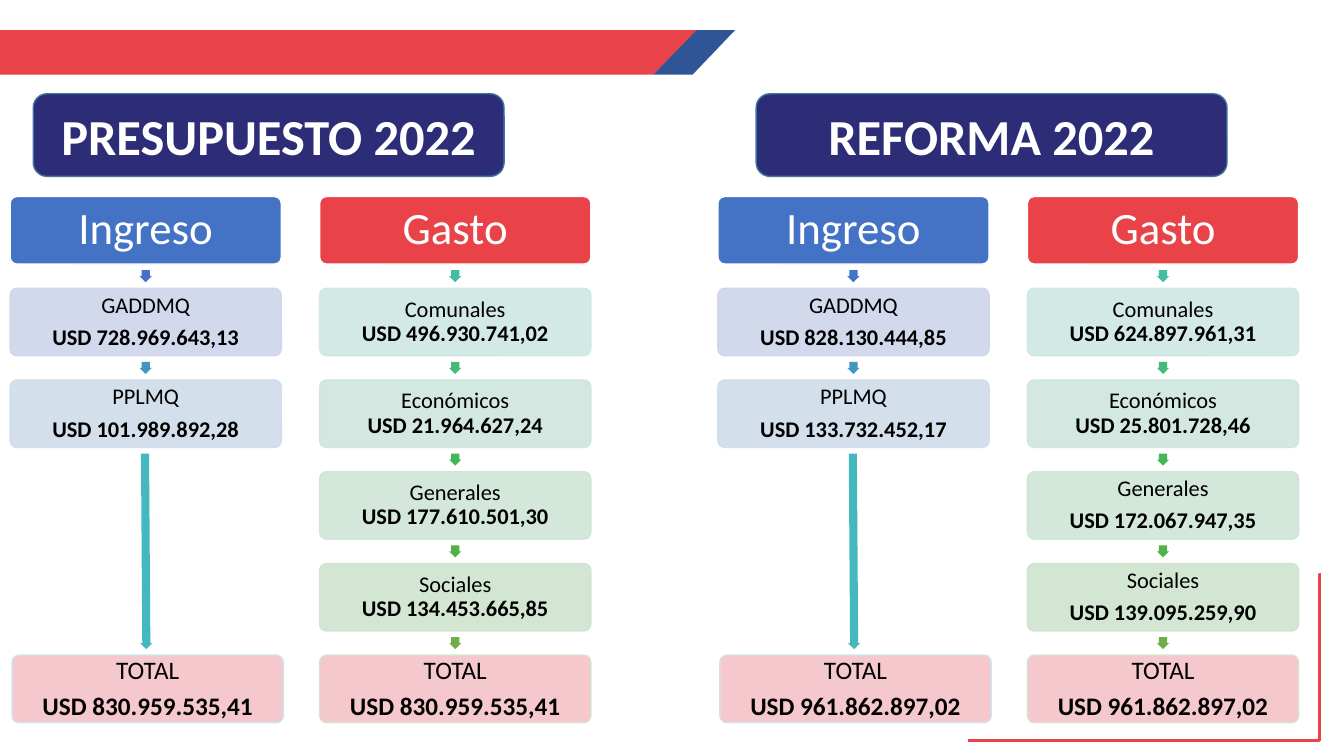
import pptx
import pptx.dml.color
import pptx.enum.shapes
import pptx.enum.text
import pptx.oxml.ns
import pptx.oxml.xmlchemy
import pptx.util
from pptx.util import Inches

SHAPES = pptx.enum.shapes.MSO_SHAPE
RED, BLUE, NAVY, WHITE, BLACK = "E94349", "4472C4", "2C2D76", "FFFFFF", "000000"
BOX_WIDTH, BOX_HEIGHT, ROW_PITCH = 2.69, 0.67, 0.91
TOTAL_ROW = 5
TOTAL_FILL = "F4C3C9"

# Each step: fill of its box, colour of the arrow that leads to it
INCOME_STEPS = [("CFD5EA", BLUE), ("CFDDE9", "4496C1")]
EXPENSE_STEPS = [("CFE7E4", "43BCA0"), ("CFE6DD", "44B97B"),
                 ("CFE5D6", "45B559"), ("CFE4CF", "52B146")]

# "\n" starts a paragraph, "\v" only breaks the line
BUDGET_INCOME = ["GADDMQ\nUSD 728.969.643,13", "PPLMQ\nUSD 101.989.892,28"]
BUDGET_EXPENSES = ["Comunales\vUSD 496.930.741,02", "Económicos\vUSD 21.964.627,24",
                   "Generales\vUSD 177.610.501,30", "Sociales\vUSD 134.453.665,85"]
REFORM_INCOME = ["GADDMQ\nUSD 828.130.444,85", "PPLMQ\nUSD 133.732.452,17"]
REFORM_EXPENSES = ["Comunales\vUSD 624.897.961,31", "Económicos\vUSD 25.801.728,46",
                   "Generales\nUSD 172.067.947,35", "Sociales\nUSD 139.095.259,90"]


def set_color(color_format, hex_color):
    color_format.rgb = pptx.dml.color.RGBColor.from_string(hex_color)


def set_fill(shape, hex_color):
    shape.shadow.inherit = False
    shape.fill.solid()
    set_color(shape.fill.fore_color, hex_color)


def set_line(shape, hex_color, width=1):
    shape.line.width = pptx.util.Pt(width)
    set_color(shape.line.color, hex_color)


def make_translucent(shape):
    """Give the fill and the line of a shape 90 % opacity."""
    for color in list(shape._element.spPr.iter(pptx.oxml.ns.qn("a:srgbClr"))):
        alpha = pptx.oxml.xmlchemy.OxmlElement("a:alpha")
        alpha.set("val", "90000")
        color.append(alpha)


def write_text(shape, text, size, hex_color, bold=False):
    frame = shape.text_frame
    frame.word_wrap = True
    frame.vertical_anchor = pptx.enum.text.MSO_ANCHOR.MIDDLE
    frame.text = text
    for paragraph in frame.paragraphs:
        paragraph.alignment = pptx.enum.text.PP_ALIGN.CENTER
        for run in paragraph.runs:
            run.font.name = "Calibri"
            run.font.size = pptx.util.Pt(size)
            run.font.bold = bold
            set_color(run.font.color, hex_color)


def add_box(shapes, left, top, text, size, fill, line, text_color=BLACK):
    box = shapes.add_shape(SHAPES.ROUNDED_RECTANGLE, Inches(left), Inches(top),
                           Inches(BOX_WIDTH), Inches(BOX_HEIGHT))
    box.adjustments[0] = 0.1
    set_fill(box, fill)
    set_line(box, line)
    write_text(box, text, size, text_color)
    frame = box.text_frame
    frame.margin_left = frame.margin_right = Inches(0.04)
    frame.margin_top = frame.margin_bottom = Inches(0.04)
    for paragraph in frame.paragraphs:
        paragraph.line_spacing = 0.9
        paragraph.space_after = pptx.util.Pt(0.35 * size)
    return box


def add_amount_box(shapes, left, top, text, size, fill, line):
    box = add_box(shapes, left, top, text, size, fill, line)
    box.text_frame.paragraphs[-1].runs[-1].font.bold = True
    make_translucent(box)


def add_down_arrow(shapes, center, top, bottom, hex_color, rotation=90):
    """Place an arrow between two boxes, whose facing sides are at top and bottom."""
    thickness = 0.12
    length = bottom - top - 0.12
    arrow = shapes.add_shape(SHAPES.RIGHT_ARROW, Inches(center - length / 2),
                             Inches((top + bottom - thickness) / 2),
                             Inches(length), Inches(thickness))
    arrow.rotation = rotation
    arrow.adjustments[0] = 0.667
    arrow.adjustments[1] = 0.5
    set_fill(arrow, hex_color)
    arrow.line.fill.background()


def add_column(shapes, left, top, title, title_fill, steps, texts, total,
               total_line, total_arrow, total_shift=0, total_rotation=90):
    center = left + BOX_WIDTH / 2
    add_box(shapes, left, top, title, 32, title_fill, WHITE, WHITE)
    bottom = top + BOX_HEIGHT
    for row, ((fill, arrow_color), text) in enumerate(zip(steps, texts), start=1):
        box_top = top + row * ROW_PITCH
        add_down_arrow(shapes, center, bottom, box_top, arrow_color)
        add_amount_box(shapes, left, box_top, text, 16, fill, fill)
        bottom = box_top + BOX_HEIGHT
    total_top = top + TOTAL_ROW * ROW_PITCH
    add_down_arrow(shapes, center, bottom, total_top, total_arrow, total_rotation)
    add_amount_box(shapes, left + total_shift, total_top, f"TOTAL\nUSD {total}", 18,
                   TOTAL_FILL, total_line)


def add_diagram(slide, left, top, income, expenses, total):
    shapes = slide.shapes.add_group_shape().shapes
    add_column(shapes, left, top, "Ingreso", BLUE, INCOME_STEPS, income, total,
               "CFE3E8", "43B8BF", total_shift=0.02, total_rotation=89.6)
    add_column(shapes, left + 3.07, top, "Gasto", RED, EXPENSE_STEPS, expenses, total,
               "D5E3CF", "70AD47")


def add_heading(slide, left, top, text):
    heading = slide.shapes.add_shape(SHAPES.FLOWCHART_ALTERNATE_PROCESS, Inches(left),
                                     Inches(top), Inches(4.67), Inches(0.82))
    set_fill(heading, NAVY)
    set_line(heading, "43739E")
    write_text(heading, text, 36, WHITE, bold=True)


def add_band(slide, points, hex_color):
    corners = [(Inches(x), Inches(y)) for x, y in points]
    builder = slide.shapes.build_freeform(*corners[0])
    builder.add_line_segments(corners[1:], close=True)
    band = builder.convert_to_shape()
    set_fill(band, hex_color)
    band.line.fill.background()


def add_top_banner(slide, top, bottom):
    add_band(slide, [(0, top), (6.92, top), (6.48, bottom), (0, bottom)], RED)
    add_band(slide, [(6.91, top), (7.29, top), (6.87, bottom), (6.48, bottom)], "2F5597")


def add_corner_line(slide, left, top, right, bottom):
    corner = slide.shapes.add_connector(pptx.enum.shapes.MSO_CONNECTOR.ELBOW, Inches(left),
                                        Inches(bottom), Inches(right), Inches(top))
    set_line(corner, RED, 2.25)
    properties = corner._element.spPr
    properties.append(pptx.oxml.xmlchemy.OxmlElement("a:effectLst"))
    guide = pptx.oxml.xmlchemy.OxmlElement("a:gd")
    guide.set("name", "adj1")
    guide.set("fmla", "val 99600")
    properties.find(".//" + pptx.oxml.ns.qn("a:avLst")).append(guide)


def main():
    presentation = pptx.Presentation()
    presentation.slide_width = Inches(13.33)
    presentation.slide_height = Inches(7.5)
    slide = presentation.slides.add_slide(presentation.slide_layouts[6])
    add_top_banner(slide, 0.3, 0.74)
    add_corner_line(slide, 9.6, 5.7, 13.1, 7.35)
    add_heading(slide, 0.33, 0.93, "PRESUPUESTO 2022")
    add_diagram(slide, 0.1, 1.95, BUDGET_INCOME, BUDGET_EXPENSES, "830.959.535,41")
    add_diagram(slide, 7.12, 1.95, REFORM_INCOME, REFORM_EXPENSES, "961.862.897,02")
    add_heading(slide, 7.5, 0.93, "REFORMA 2022")
    presentation.save("out.pptx")


if __name__ == "__main__":
    main()
